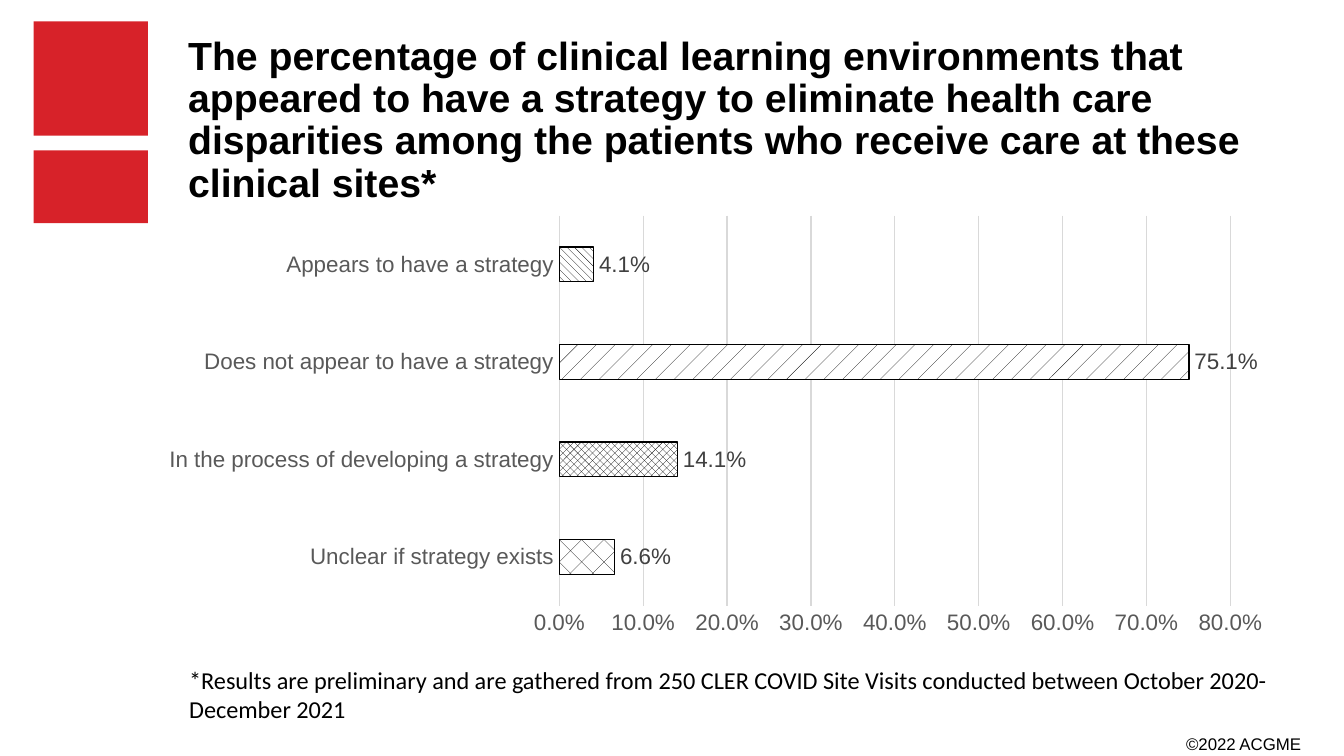
from pptx import Presentation
from pptx import util as u
from pptx.chart.data import CategoryChartData
from pptx.dml.color import RGBColor
from pptx.enum import chart as charts, dml, shapes, text

BLACK = RGBColor(0x00, 0x00, 0x00)
WHITE = RGBColor(0xFF, 0xFF, 0xFF)
RED = RGBColor(0xD7, 0x22, 0x29)
AXIS_GRAY = RGBColor(0x59, 0x59, 0x59)
LABEL_GRAY = RGBColor(0x40, 0x40, 0x40)
GRID_GRAY = RGBColor(0xD9, 0xD9, 0xD9)

WIDTH = 10
HEIGHT = WIDTH * 9 / 16
PERCENT = "0.0%"

TITLE = (
    "The percentage of clinical learning environments that appeared to have a "
    "strategy to eliminate health care disparities among the patients who "
    "receive care at these clinical sites*"
)
FOOTNOTE = (
    "*Results are preliminary and are gathered from 250 CLER COVID Site Visits "
    "conducted between October 2020-December 2021"
)
# Category, share and bar pattern, from the bottom bar up
BARS = [
    ("Unclear if strategy exists", 0.066, dml.MSO_PATTERN.DIAGONAL_BRICK),
    ("In the process of developing a strategy", 0.141, dml.MSO_PATTERN.SOLID_DIAMOND),
    ("Does not appear to have a strategy", 0.751, dml.MSO_PATTERN.PERCENT_5),
    ("Appears to have a strategy", 0.041, dml.MSO_PATTERN.WIDE_DOWNWARD_DIAGONAL),
]


def inches(box):
    return [u.Inches(length) for length in box]


def style_font(font, size, color, name="Arial", bold=False):
    font.name, font.size, font.bold = name, u.Pt(size), bold
    font.color.rgb = color


def add_brand_blocks(slide, box):
    """A red square over a shorter red block, with a gap between them."""
    left, top, width, height = box
    short = height - width - 0.11
    for block_top, block_height in ((top, width), (top + height - short, short)):
        block = slide.shapes.add_shape(
            shapes.MSO_SHAPE.RECTANGLE, *inches((left, block_top, width, block_height)))
        block.shadow.inherit = False
        block.fill.solid()
        block.fill.fore_color.rgb = RED
        block.line.fill.background()


def place_title(slide, box):
    title = slide.shapes.title
    title.left, title.top, title.width, title.height = inches(box)
    frame = title.text_frame
    frame.text = TITLE
    frame.word_wrap = True
    frame.auto_size = text.MSO_AUTO_SIZE.NONE
    frame.vertical_anchor = text.MSO_ANCHOR.TOP
    paragraph = frame.paragraphs[0]
    paragraph.alignment = text.PP_ALIGN.LEFT
    paragraph.line_spacing = 0.9
    style_font(paragraph.runs[0].font, 21, BLACK, bold=True)


def add_strategy_chart(slide, box):
    data = CategoryChartData(number_format=PERCENT)
    data.categories = [name for name, _, _ in BARS]
    data.add_series("Series 1", [share for _, share, _ in BARS])
    chart = slide.shapes.add_chart(
        charts.XL_CHART_TYPE.BAR_CLUSTERED, *inches(box), data).chart
    chart.has_legend = False
    chart.has_title = False
    style_font(chart.font, 10, BLACK)

    # Axes
    for axis in (chart.category_axis, chart.value_axis):
        axis.major_tick_mark = axis.minor_tick_mark = charts.XL_TICK_MARK.NONE
        style_font(axis.tick_labels.font, 12, AXIS_GRAY)
    values = chart.value_axis
    values.tick_labels.number_format = PERCENT
    values.tick_labels.number_format_is_linked = False
    values.format.line.fill.background()
    values.has_major_gridlines = True
    chart.category_axis.has_major_gridlines = False
    for line in (chart.category_axis.format.line, values.major_gridlines.format.line):
        line.color.rgb = GRID_GRAY
        line.width = u.Pt(0.75)

    # Patterned bars
    plot = chart.plots[0]
    plot.gap_width = 182
    plot.vary_by_categories = False
    series = plot.series[0]
    series.format.fill.solid()
    series.format.fill.fore_color.rgb = BLACK
    series.format.line.color.rgb = BLACK
    series.format.line.width = u.Pt(0.75)
    for index, (_, _, pattern) in enumerate(BARS):
        bar = series.points[index].format
        bar.fill.patterned()
        bar.fill.pattern = pattern
        bar.fill.fore_color.rgb = BLACK
        bar.fill.back_color.rgb = WHITE
        bar.line.color.rgb = BLACK
        bar.line.width = u.Pt(0.75)

    # Value labels
    labels = series.data_labels
    labels.show_value = True
    labels.position = charts.XL_LABEL_POSITION.OUTSIDE_END
    labels.number_format = PERCENT
    labels.number_format_is_linked = False
    style_font(labels.font, 12, LABEL_GRAY)


def add_note(slide, box, wording, size, font_name, alignment, wrap=True):
    frame = slide.shapes.add_textbox(*inches(box)).text_frame
    frame.text = wording
    frame.word_wrap = wrap
    paragraph = frame.paragraphs[0]
    paragraph.alignment = alignment
    style_font(paragraph.runs[0].font, size, BLACK, font_name)


def build_slide(presentation):
    slide = presentation.slides.add_slide(presentation.slide_layouts[5])
    content_left, content_width = 0.13 * WIDTH, 0.847 * WIDTH
    add_brand_blocks(slide, (0.25, 0.16, 0.85, 1.5))
    place_title(slide, (content_left, 0.22, content_width, 1.43))
    add_strategy_chart(slide, (1.09, 1.54, content_width, 3.25))
    add_note(slide, (content_left + 0.01, 4.9, content_width, 0.54),
             FOOTNOTE, 13, "Calibri", text.PP_ALIGN.LEFT)
    add_note(slide, (8.71, 5.41, 1.07, 0.25),
             "©2022 ACGME", 9, "Arial", text.PP_ALIGN.RIGHT, wrap=False)


def main():
    presentation = Presentation()
    presentation.slide_width, presentation.slide_height = inches((WIDTH, HEIGHT))
    build_slide(presentation)
    presentation.save("out.pptx")


if __name__ == "__main__":
    main()
